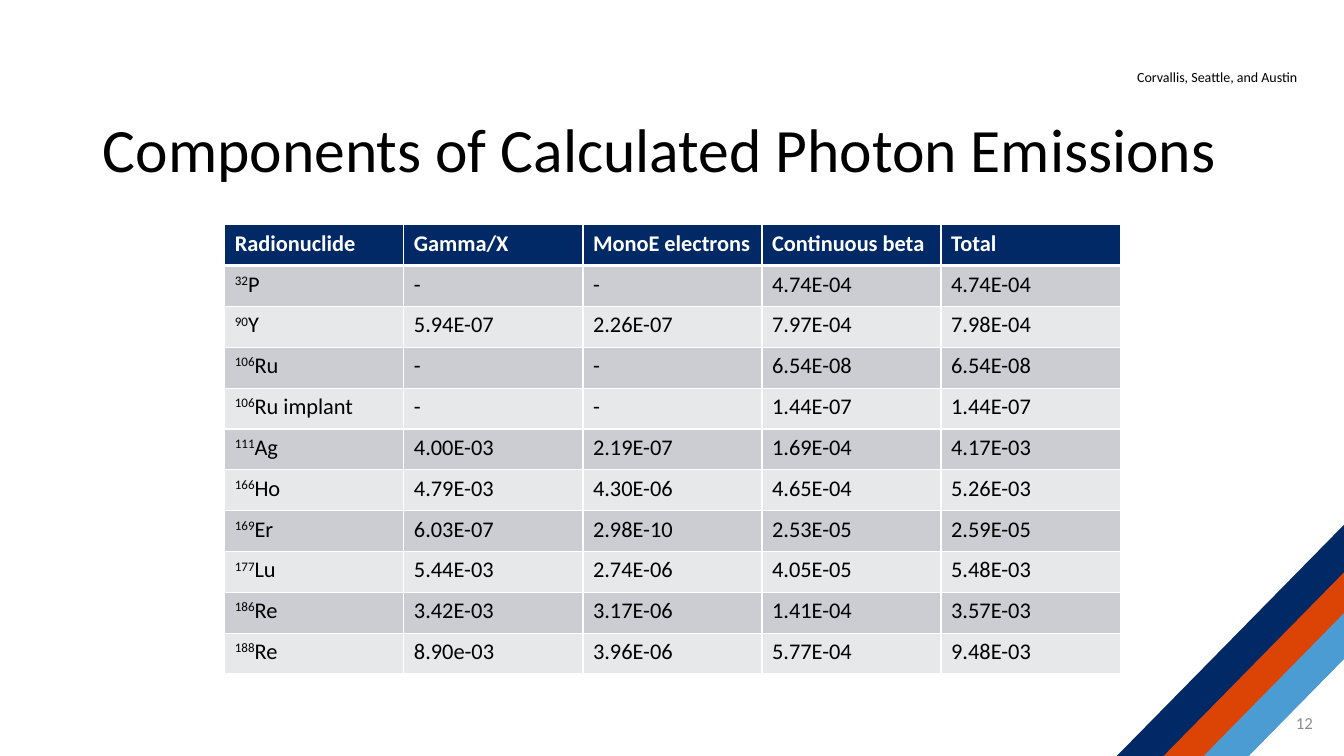
import pptx
import pptx.dml.color
import pptx.enum.shapes
import pptx.enum.text
import pptx.oxml
import pptx.oxml.ns
import pptx.util

Inches = pptx.util.Inches
RGBColor = pptx.dml.color.RGBColor
ALIGN = pptx.enum.text.PP_ALIGN
ANCHOR = pptx.enum.text.MSO_ANCHOR

BLACK = RGBColor(0x00, 0x00, 0x00)
WHITE = RGBColor(0xFF, 0xFF, 0xFF)
GRAY = RGBColor(0x8C, 0x8C, 0x8C)
NAVY = RGBColor(0x00, 0x29, 0x66)
ORANGE = RGBColor(0xDC, 0x44, 0x05)
SKY = RGBColor(0x4B, 0x9C, 0xD3)
DARK = RGBColor(0xCC, 0xCD, 0xD3)
LIGHT = RGBColor(0xE7, 0xE8, 0xEA)

STRIPES = [
    (11.66, 6.75, 2.14, SKY),
    (11.12, 6.48, 2.85, ORANGE),
    (10.65, 6.3, 3.35, NAVY),
]
HEADS = ["Radionuclide", "Gamma/X", "MonoE electrons", "Continuous beta", "Total"]
ROWS = [
    ("32", "P", "-", "-", "4.74E-04", "4.74E-04"),
    ("90", "Y", "5.94E-07", "2.26E-07", "7.97E-04", "7.98E-04"),
    ("106", "Ru", "-", "-", "6.54E-08", "6.54E-08"),
    ("106", "Ru implant", "-", "-", "1.44E-07", "1.44E-07"),
    ("111", "Ag", "4.00E-03", "2.19E-07", "1.69E-04", "4.17E-03"),
    ("166", "Ho", "4.79E-03", "4.30E-06", "4.65E-04", "5.26E-03"),
    ("169", "Er", "6.03E-07", "2.98E-10", "2.53E-05", "2.59E-05"),
    ("177", "Lu", "5.44E-03", "2.74E-06", "4.05E-05", "5.48E-03"),
    ("186", "Re", "3.42E-03", "3.17E-06", "1.41E-04", "3.57E-03"),
    ("188", "Re", "8.90e-03", "3.96E-06", "5.77E-04", "9.48E-03"),
]


def write(frame, text, size=16, color=BLACK, bold=False, align=ALIGN.LEFT,
          mass="", space=None):
    para = frame.paragraphs[0]
    para.alignment = align
    para.line_spacing = space
    for part in filter(None, (mass, text)):
        run = para.add_run()
        run.text = part
        run.font.name = "Calibri"
        run.font.size = pptx.util.Pt(size)
        run.font.bold = bold
        run.font.color.rgb = color
        if part == mass:
            run._r.get_or_add_rPr().set("baseline", "30000")


def add_text(slide, text, left, top, width, height, wrap=True,
             anchor=ANCHOR.TOP, **style):
    box = slide.shapes.add_textbox(
        Inches(left), Inches(top), Inches(width), Inches(height))
    box.text_frame.word_wrap = wrap
    box.text_frame.vertical_anchor = anchor
    write(box.text_frame, text, **style)


def add_title(slide, text):
    title = slide.shapes.title
    title.left, title.top = Inches(0.92), Inches(0.96)
    title.width, title.height = Inches(11.5), Inches(1.1)
    title.text_frame.auto_size = pptx.enum.text.MSO_AUTO_SIZE.NONE
    title.text_frame.vertical_anchor = ANCHOR.MIDDLE
    write(title.text_frame, text, size=44, space=0.9)


def add_stripe(slide, left, top, width, color):
    stripe = slide.shapes.add_shape(
        pptx.enum.shapes.MSO_SHAPE.RECTANGLE,
        Inches(left), Inches(top), Inches(width), Inches(0.33))
    stripe.rotation = 314.5
    stripe.shadow.inherit = False
    stripe.fill.solid()
    stripe.fill.fore_color.rgb = color
    stripe.line.fill.background()


def add_edge(cell, side, points):
    cell._tc.get_or_add_tcPr().append(pptx.oxml.parse_xml(
        f'<a:ln{side} {pptx.oxml.ns.nsdecls("a")} w="{pptx.util.Pt(points)}">'
        f'<a:solidFill><a:srgbClr val="{WHITE}"/></a:solidFill></a:ln{side}>'))


def fill_cell(cell, row, text, mass=""):
    for side in "LRTB":
        thick = (row, side) in ((0, "B"), (1, "T"))
        add_edge(cell, side, 3 if thick else 1)
    head = row == 0
    cell.fill.solid()
    cell.fill.fore_color.rgb = NAVY if head else DARK if row % 2 else LIGHT
    write(cell.text_frame, text, mass=mass, bold=head,
          color=WHITE if head else BLACK)


def add_grid(slide):
    count = len(ROWS) + 1
    grid = slide.shapes.add_table(
        count, len(HEADS), Inches(2.23), Inches(2.23),
        Inches(8.88), Inches(4.46)).table
    for line in grid.rows:
        line.height = Inches(4.46 / count)
    for col, text in enumerate(HEADS):
        fill_cell(grid.cell(0, col), 0, text)
    for row, (mass, *texts) in enumerate(ROWS, 1):
        for col, text in enumerate(texts):
            fill_cell(grid.cell(row, col), row, text, "" if col else mass)


def main():
    deck = pptx.Presentation()
    deck.slide_width, deck.slide_height = Inches(13.33), Inches(7.5)
    slide = deck.slides.add_slide(deck.slide_layouts.get_by_name("Title Only"))
    add_text(slide, "Corvallis, Seattle, and Austin", 11.18, 0.63, 1.82, 0.27,
             wrap=False, size=10)
    for stripe in STRIPES:
        add_stripe(slide, *stripe)
    add_title(slide, "Components of Calculated Photon Emissions")
    add_text(slide, "12", 10.12, 6.97, 3, 0.4, anchor=ANCHOR.MIDDLE,
             size=12, color=GRAY, align=ALIGN.RIGHT)
    add_grid(slide)
    deck.save("out.pptx")


if __name__ == "__main__":
    main()
